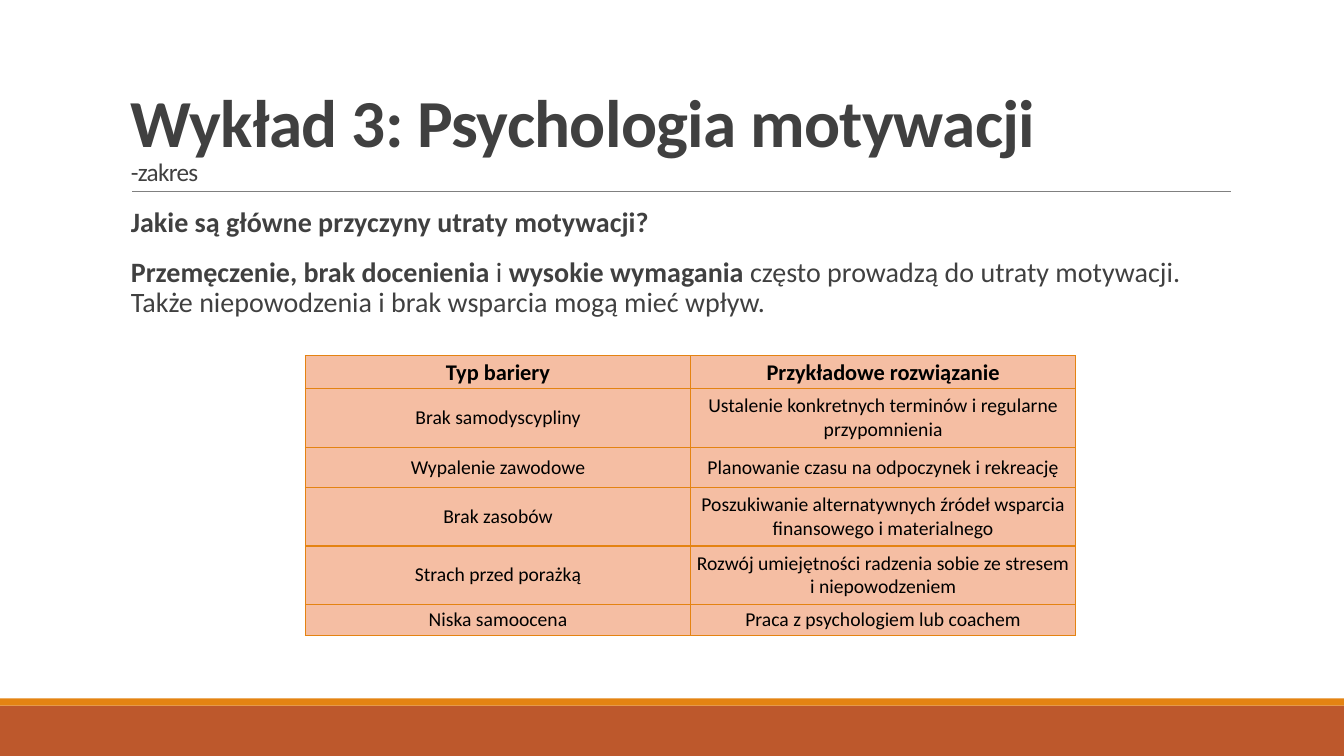
from lxml import etree
from pptx import Presentation
from pptx.dml.color import RGBColor
from pptx.enum.shapes import MSO_CONNECTOR, MSO_SHAPE
from pptx.enum.text import MSO_ANCHOR, PP_ALIGN
from pptx.oxml.ns import qn
from pptx.util import Inches, Pt

RECTANGLE = MSO_SHAPE.RECTANGLE
STRAIGHT = MSO_CONNECTOR.STRAIGHT
TOP, MIDDLE, BOTTOM = MSO_ANCHOR.TOP, MSO_ANCHOR.MIDDLE, MSO_ANCHOR.BOTTOM
CENTER = PP_ALIGN.CENTER

RUST = RGBColor(0xBD, 0x58, 0x2C)
ORANGE = RGBColor(0xE4, 0x83, 0x12)
PEACH = RGBColor(0xF5, 0xBE, 0xA3)
GRAY = RGBColor(0x80, 0x80, 0x80)
DARK = RGBColor(0x40, 0x40, 0x40)
BLACK = RGBColor(0, 0, 0)
FONT = "Calibri"

# Content: text runs are (text, size, bold)
TITLE = ("Wykład 3: Psychologia motywacji ", 48, True)
SUBTITLE = ("-zakres", 18, False)
BODY = [
    [("Jakie są główne przyczyny utraty motywacji?", 20, True)],
    [
        ("Przemęczenie, brak docenienia", 20, True),
        (" i ", 20, False),
        ("wysokie wymagania ", 20, True),
        ("często prowadzą do utraty motywacji. Także niepowodzenia "
         "i brak wsparcia mogą mieć wpływ.", 20, False),
    ],
]
BARRIERS = [
    ("Typ bariery", "Przykładowe rozwiązanie"),
    ("Brak samodyscypliny", "Ustalenie konkretnych terminów i regularne przypomnienia"),
    ("Wypalenie zawodowe", "Planowanie czasu na odpoczynek i rekreację"),
    ("Brak zasobów", "Poszukiwanie alternatywnych źródeł wsparcia finansowego i materialnego"),
    ("Strach przed porażką", "Rozwój umiejętności radzenia sobie ze stresem i niepowodzeniem"),
    ("Niska samoocena", "Praca z psychologiem lub coachem"),
]
ROW_HEIGHTS = [0.31, 0.58, 0.4, 0.58, 0.58, 0.31]
COLUMN_WIDTH = 3.82
BANDS = [(7, 0.5, RUST), (6.93, 0.07, ORANGE)]  # top, height, colour
SLIDE_WIDTH = 13.33


def set_values(target, values):
    for name, value in values.items():
        setattr(target, name, value)


def add_run(paragraph, content, color):
    text, size, bold = content
    run = paragraph.add_run()
    run.text = text
    set_values(run.font, {"size": Pt(size), "bold": bold, "name": FONT})
    run.font.color.rgb = color
    return run


def add_text_frame(slide, top, height, anchor):
    box = slide.shapes.add_textbox(Inches(1.2), Inches(top), Inches(11), Inches(height))
    frame = box.text_frame
    set_values(frame, {"word_wrap": True, "vertical_anchor": anchor})
    return frame


def add_borders(cell):
    properties = cell._tc.get_or_add_tcPr()
    for position, side in enumerate(("a:lnL", "a:lnR", "a:lnT", "a:lnB")):
        line = etree.Element(qn(side), w=str(Pt(1)))
        fill = etree.SubElement(line, qn("a:solidFill"))
        etree.SubElement(fill, qn("a:srgbClr"), val=str(ORANGE))
        properties.insert(position, line)


presentation = Presentation()
presentation.slide_width = Inches(SLIDE_WIDTH)
presentation.slide_height = Inches(7.5)
slide = presentation.slides.add_slide(presentation.slide_layouts[6])

# Footer bands and title rule
for top, height, color in BANDS:
    band = slide.shapes.add_shape(
        RECTANGLE, 0, Inches(top), Inches(SLIDE_WIDTH), Inches(height))
    band.shadow.inherit = False
    band.fill.solid()
    band.fill.fore_color.rgb = color
    band.line.fill.background()

rule = slide.shapes.add_connector(
    STRAIGHT, Inches(1.31), Inches(1.9), Inches(12.21), Inches(1.9))
rule.line.color.rgb = GRAY
rule.line.width = Pt(0.5)
etree.SubElement(rule._element.spPr, qn("a:effectLst"))

# Title
paragraph = add_text_frame(slide, 0.5, 1.4, BOTTOM).paragraphs[0]
paragraph.line_spacing = 0.85
for index, content in enumerate((TITLE, SUBTITLE)):
    if index:
        paragraph.add_line_break()
    run = add_run(paragraph, content, DARK)
    run.font._element.set("spc", "-50")

# Body text
frame = add_text_frame(slide, 2.02, 4.4, TOP)
for index, runs in enumerate(BODY):
    paragraph = frame.add_paragraph() if index else frame.paragraphs[0]
    set_values(paragraph, {
        "line_spacing": 0.9, "space_before": Pt(12), "space_after": Pt(2)})
    for content in runs:
        add_run(paragraph, content, DARK)

# Barrier table
table = slide.shapes.add_table(
    len(BARRIERS), 2, Inches(3.03), Inches(3.53),
    Inches(2 * COLUMN_WIDTH), Inches(sum(ROW_HEIGHTS))).table
for column in table.columns:
    column.width = Inches(COLUMN_WIDTH)
for row_index, texts in enumerate(BARRIERS):
    table.rows[row_index].height = Inches(ROW_HEIGHTS[row_index])
    is_header = row_index == 0
    for column_index, text in enumerate(texts):
        cell = table.cell(row_index, column_index)
        set_values(cell, {
            "vertical_anchor": MIDDLE,
            "margin_left": Inches(0.05), "margin_right": Inches(0.05),
            "margin_top": Inches(0.03), "margin_bottom": Inches(0.03)})
        cell.fill.solid()
        cell.fill.fore_color.rgb = PEACH
        add_borders(cell)
        paragraph = cell.text_frame.paragraphs[0]
        paragraph.alignment = CENTER
        add_run(paragraph, (text, 16 if is_header else 14, is_header), BLACK)

presentation.save("out.pptx")
